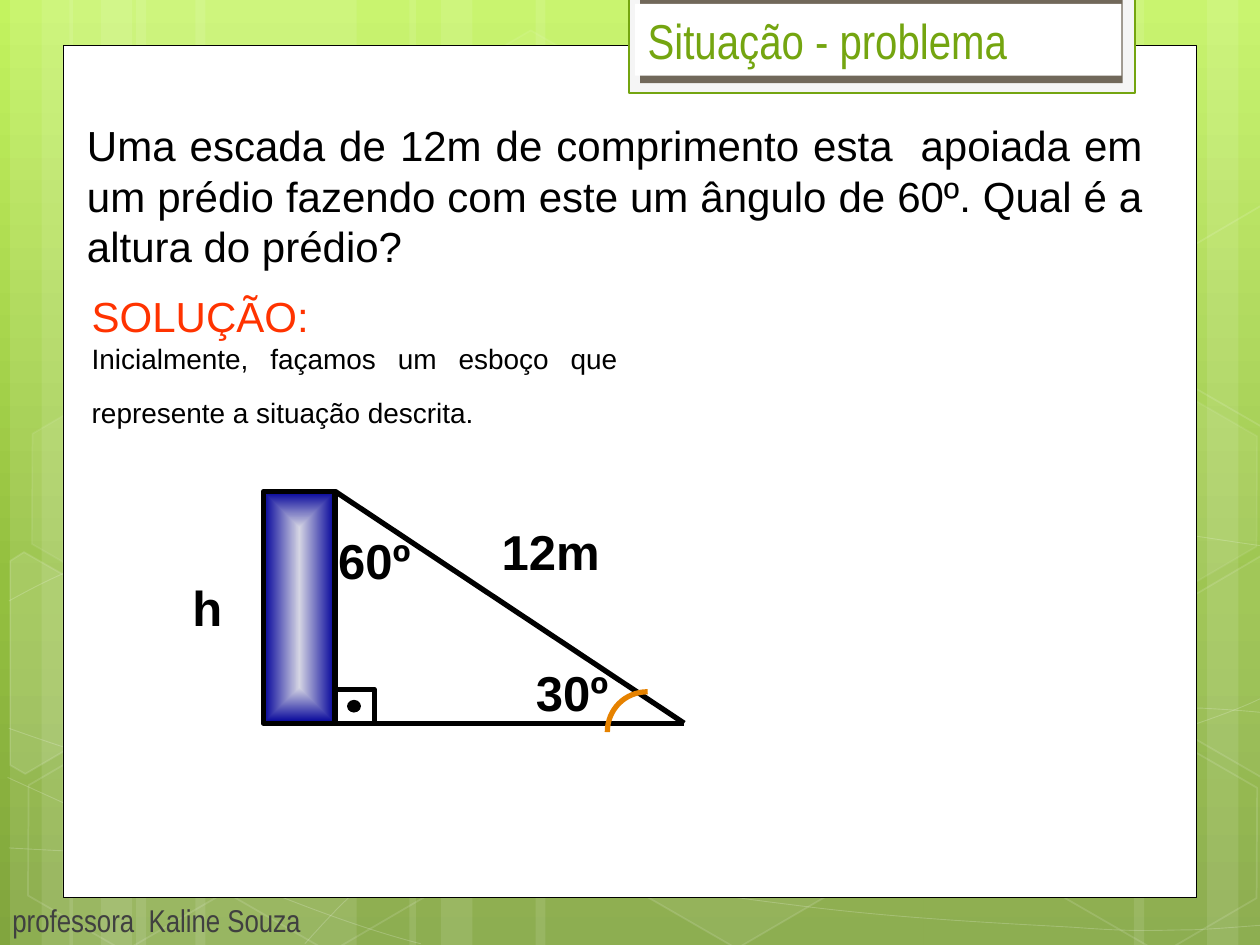
"""Build the 'Situação - problema' trigonometry slide."""
from math import cos, radians, sin

from lxml.etree import SubElement
from pptx import Presentation
from pptx.dml.color import RGBColor
from pptx.enum.shapes import MSO_CONNECTOR as Connector, MSO_SHAPE as Preset
from pptx.enum.text import MSO_ANCHOR as Anchor, MSO_AUTO_SIZE as AutoSize, PP_ALIGN as Align
from pptx.oxml.ns import qn
from pptx.util import Inches, Pt

COLORS = {
    "white": "FFFFFF", "black": "000000", "frame": "F5F5F5", "brown": "71685A",
    "green": "74A510", "grey": "404040", "red": "FF3300", "orange": "E68200",
    "bright": "C3F35F", "leaf": "93BF3F", "moss": "81A53E",
    "pale": "D5D5E3", "navy": "000099",
}
WIDTH, HEIGHT = 10, 7.5

TITLE = [(Align.LEFT, [("Situação - problema", 28, "green", False)])]
QUESTION = [(Align.JUSTIFY, [(
    "Uma escada de 12m de comprimento esta  apoiada em um prédio fazendo com este "
    "um ângulo de 60º. Qual é a altura do prédio? ", 24, "black", False)])]
SOLUTION = [
    (Align.LEFT, [("SOLUÇÃO:", 24, "red", False)]),
    (Align.JUSTIFY, [
        ("Inicialmente, façamos um esboço que represente a situação descrita.", 16, "black", False),
        (" ", 28, "red", False)]),
]
FOOTER = [(Align.LEFT, [("professora  Kaline Souza", 18, "grey", False)])]
LABELS = [("h", 1.38, 4.65, 0.53), ("12m", 3.75, 4.21, 1.24),
          ("60º", 2.35, 4.28, 1.24), ("30º", 3.92, 5.33, 1.24)]

BANDS = [(1.08, 1.75), (0.08, 0.5), (0.33, 0.83), (1.55, 1.75), (0.55, 0.5), (0.8, 0.83),
         (7.33, 1.75), (9.58, 0.5), (9, 0.83), (4.25, 3.08), (3.25, 0.5), (3.5, 0.83)]
WAVES = [
    [(0.07, 6.73), (0.61, 6.76), (1.15, 6.79), (1.9, 6.78), (2.65, 6.77), (3.58, 6.75),
     (4.58, 6.65), (5.58, 6.55), (7, 6.36), (7.92, 6.17), (8.83, 5.98), (9.77, 5.68), (10.07, 5.51)],
    [(0.07, 4.77), (0.36, 4.61), (0.65, 4.46), (1.21, 4.31), (1.78, 4.16), (2.59, 3.94),
     (3.47, 3.87), (4.36, 3.8), (5.44, 3.79), (6.54, 3.87), (7.64, 3.95), (9.47, 4.26), (10.07, 4.34)],
    [(0.06, 6.17), (1.27, 6.72), (2.47, 7.27), (3.34, 7.49)],
    [(0.07, 5.78), (0.38, 5.89), (0.7, 6), (1.28, 6.16), (1.86, 6.31), (2.73, 6.56), (3.57, 6.73),
     (4.4, 6.9), (5.45, 7.08), (6.28, 7.18), (7.11, 7.29), (8, 7.33), (8.53, 7.36),
     (9.05, 7.4), (9.19, 7.38), (9.45, 7.38), (9.71, 7.37), (9.89, 7.35), (10.07, 7.34)],
    [(2.42, 7.49), (2.6, 7.29), (2.78, 7.09), (3.02, 6.91), (3.26, 6.73), (3.6, 6.53), (3.88, 6.39),
     (4.16, 6.25), (4.33, 6.19), (4.7, 6.09), (5.06, 5.99), (5.73, 5.85), (6.08, 5.78),
     (6.44, 5.71), (6.49, 5.71), (6.8, 5.69), (7.11, 5.66), (7.6, 5.63), (7.94, 5.62),
     (8.29, 5.61), (8.86, 5.62), (8.86, 5.62), (9.08, 5.62), (9.3, 5.62), (9.53, 5.62),
     (9.71, 5.63), (9.88, 5.64), (10.06, 5.66)],
]
HEXAGONS = [(3.34, 0.36, 4, 8), (4.97, 5.89, 6, 12), (0.11, 5.91, 0, 12), (0.14, 3.12, 7, 8),
            (1.74, 5.92, 0, 12), (7.53, 4.53, 10, 12), (8.34, 5.93, 0, 12), (8.34, 3.14, 7, 8)]
TILT = 30
CUT_HEXAGONS = [
    ([(0.08, 4.45), (0.19, 4.38), (0.96, 4.82), (0.95, 5.7), (0.2, 6.14), (0.08, 6.07)],
     (0.36, 5.35), 10),
    ([(9.26, 4.85), (10.01, 4.41), (10.09, 4.46), (10.09, 6.13), (10.02, 6.17), (9.26, 5.73)],
     (9.85, 5.2), 4),
    ([(9.26, 2.07), (10.01, 1.63), (10.1, 1.68), (10.09, 3.35), (10.02, 3.39), (9.26, 2.95)],
     (9.85, 2.41), 0),
]
WALL_LEFT, WALL_RIGHT, ROOF, GROUND, LADDER_FOOT = 2.09, 2.66, 3.9, 5.74, 5.43
CORNER_WIDTH, CORNER_HEIGHT = 0.31, 0.27
ARC = [(5.14, 5.49), (4.96, 5.49), (4.82, 5.63), (4.82, 5.81)]

prs = Presentation()
prs.slide_width, prs.slide_height = Inches(WIDTH), Inches(HEIGHT)
slide = prs.slides.add_slide(prs.slide_layouts[1])
shapes = slide.shapes


def rgb(name):
    return RGBColor.from_string(COLORS[name])


def set_alpha(parent, percent):
    if percent < 100:
        SubElement(parent.find(qn("a:solidFill"))[0], qn("a:alpha"), val=str(percent * 1000))


def paint(shape, fill=None, line=None, width=1, fill_alpha=100, line_alpha=100):
    shape.shadow.inherit = False
    properties = shape.element.spPr
    if fill and fill_alpha:
        shape.fill.solid()
        shape.fill.fore_color.rgb = rgb(fill)
        set_alpha(properties, fill_alpha)
    else:
        shape.fill.background()
    if line:
        shape.line.color.rgb = rgb(line)
        shape.line.width = Pt(width)
        set_alpha(properties.find(qn("a:ln")), line_alpha)
    else:
        shape.line.fill.background()
    return shape


def add_preset(preset, box, **style):
    return paint(shapes.add_shape(preset, *map(Inches, box)), **style)


def add_outline(points, close, **style):
    corners = [(Inches(x), Inches(y)) for x, y in points]
    builder = shapes.build_freeform(*corners[0])
    builder.add_line_segments(corners[1:], close=close)
    return paint(builder.convert_to_shape(), **style)


def add_curve(points, **style):
    curve = add_outline(points, False, **style)
    outline = curve.element.find(".//" + qn("a:path"))
    segments = outline.findall(qn("a:lnTo"))
    for start in range(0, len(segments), 3):
        bend = SubElement(outline, qn("a:cubicBezTo"))
        for segment in segments[start:start + 3]:
            bend.append(segment[0])
            outline.remove(segment)


def turn_back(point, center):
    x, y = point[0] - center[0], point[1] - center[1]
    c, s = cos(radians(TILT)), sin(radians(TILT))
    return center[0] + x * c + y * s, center[1] - x * s + y * c


def add_line(start, end):
    line = shapes.add_connector(Connector.STRAIGHT, *map(Inches, start + end))
    line.line.color.rgb = rgb("black")
    line.line.width = Pt(3)
    SubElement(line.element.spPr, qn("a:effectLst"))


def set_gradient(fill, parent, stops):
    fill.gradient()
    gradient = parent.find(qn("a:gradFill"))
    for child in list(gradient):
        gradient.remove(child)
    stop_list = SubElement(gradient, qn("a:gsLst"))
    for position, name in stops:
        stop = SubElement(stop_list, qn("a:gs"), pos=str(position * 1000))
        SubElement(stop, qn("a:srgbClr"), val=COLORS[name])
    return gradient


def write(shape, paragraphs, font, anchor=Anchor.MIDDLE):
    frame = shape.text_frame
    frame.word_wrap, frame.auto_size, frame.vertical_anchor = True, AutoSize.NONE, anchor
    for index, (align, runs) in enumerate(paragraphs):
        paragraph = frame.add_paragraph() if index else frame.paragraphs[0]
        properties = paragraph._p.get_or_add_pPr()
        properties.set("marL", "0")
        properties.set("indent", "0")
        SubElement(properties, qn("a:buNone"))
        paragraph.alignment, paragraph.space_before = align, Pt(0)
        for text, size, color, bold in runs:
            run = paragraph.add_run()
            run.text = text
            run.font.name, run.font.size, run.font.bold = font, Pt(size), bold
            run.font.color.rgb = rgb(color)


def add_text(box, paragraphs, font="Arial", **layout):
    write(shapes.add_textbox(*map(Inches, box)), paragraphs, font, **layout)


def place(holder, box):
    holder.left, holder.top, holder.width, holder.height = map(Inches, box)
    shapes.element.append(holder.element)
    return holder


sky_fill = slide.background.fill
sky_fill.solid()
sky = set_gradient(sky_fill, slide.element.find(".//" + qn("p:bgPr")),
                   [(0, "bright"), (62, "leaf"), (100, "moss")])
SubElement(sky, qn("a:lin"), ang="5400000", scaled="0")

for left, width in BANDS:
    add_preset(Preset.RECTANGLE, (left, 0, width, HEIGHT), fill="white", fill_alpha=10)
for wave in WAVES:
    add_curve(wave, line="white", width=0.5, line_alpha=20)
for left, top, fill_alpha, line_alpha in HEXAGONS:
    hexagon = add_preset(Preset.HEXAGON, (left, top, 1.75, 1.52), fill="white", line="white",
                         fill_alpha=fill_alpha, line_alpha=line_alpha)
    hexagon.adjustments[0], hexagon.adjustments[1] = 0.285, 1.155
    hexagon.rotation = TILT
for corners, center, fill_alpha in CUT_HEXAGONS:
    add_outline([turn_back(corner, center) for corner in corners], True, fill="white", line="white",
                fill_alpha=fill_alpha, line_alpha=12).rotation = TILT

add_preset(Preset.RECTANGLE, (0.5, 0.36, 9, 6.76), fill="white", line="black", width=0.5)
add_preset(Preset.RECTANGLE, (4.99, -0.02, 4.02, 0.76), fill="frame", line="green", width=1.25)
add_preset(Preset.RECTANGLE, (5.08, -0.02, 3.83, 0.68), fill="brown")
add_text((0, 7.1, WIDTH, 0.4), FOOTER, "Arial Narrow", anchor=Anchor.TOP)
title = place(shapes.title, (5.04, 0.03, 3.86, 0.57))
title.fill.solid()
title.fill.fore_color.rgb = rgb("white")
write(title, TITLE, "Arial Narrow")
write(place(slide.placeholders[1], (0.59, 0.84, 8.58, 1.42)), QUESTION, "Arial")
add_text((0.63, 2.26, 4.37, 1.19), SOLUTION, anchor=Anchor.TOP)

building = add_preset(Preset.RECTANGLE, (WALL_LEFT, ROOF, WALL_RIGHT - WALL_LEFT, GROUND - ROOF),
                      line="black", width=3)
shade = set_gradient(building.fill, building.element.spPr, [(0, "pale"), (100, "navy")])
glow = SubElement(shade, qn("a:path"), path="shape")
SubElement(glow, qn("a:fillToRect"), l="50000", t="50000", r="50000", b="50000")
add_line((WALL_LEFT, GROUND), (LADDER_FOOT, GROUND))
add_preset(Preset.RECTANGLE, (WALL_RIGHT, GROUND - CORNER_HEIGHT, CORNER_WIDTH, CORNER_HEIGHT),
           line="black", width=3)
add_preset(Preset.OVAL, (2.76, 5.56, 0.1, 0.09), fill="black", line="black", width=0.75)
add_line((WALL_RIGHT, ROOF), (LADDER_FOOT, GROUND))
for label, left, top, width in LABELS:
    add_text((left, top, width, 0.33), [(Align.CENTER, [(label, 28, "black", True)])])
add_curve(ARC, line="orange", width=3)

prs.save("out.pptx")
